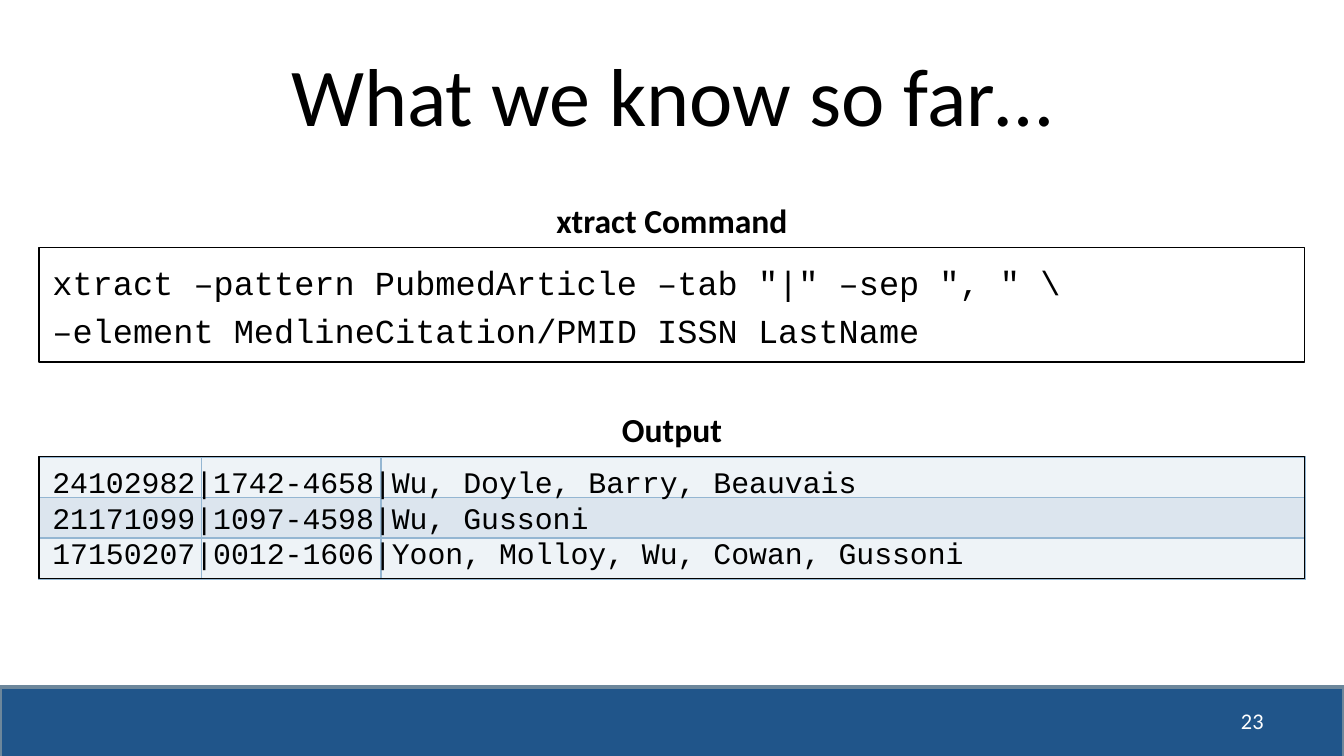
from dataclasses import dataclass

from lxml import etree
from pptx import Presentation
from pptx.dml.color import RGBColor
from pptx.enum.shapes import MSO_SHAPE
from pptx.enum.text import MSO_ANCHOR, PP_ALIGN
from pptx.oxml.ns import qn
from pptx.util import Pt

RECTANGLE = MSO_SHAPE.RECTANGLE
TOP, MIDDLE = MSO_ANCHOR.TOP, MSO_ANCHOR.MIDDLE
LEFT, CENTER, RIGHT = PP_ALIGN.LEFT, PP_ALIGN.CENTER, PP_ALIGN.RIGHT


@dataclass(frozen=True)
class Theme:
    body_font: str = "Calibri"
    code_font: str = "Courier New"
    ink: str = "000000"
    paper: str = "FFFFFF"
    footer: str = "20558A"
    footer_line: str = "6D879B"
    grid: str = "94B6D2"
    bands: tuple = ("EEF3F7", "DCE5EE")
    title_size: int = 44
    heading_size: int = 18
    command_size: int = 18
    output_size: int = 16
    number_size: int = 12


THEME = Theme()

# Shared panel geometry, in points
PANEL_LEFT, PANEL_WIDTH = 21, 678
COMMAND_TOP, COMMAND_HEIGHT = 132.5, 61.5
OUTPUT_TOP, OUTPUT_HEIGHT = 244.7, 65.4
HEADING_WIDTH, HEADING_HEIGHT = 150.5, 29
COLUMN_WIDTHS = (87, 96, 495)
ROW_COUNT = 3

COMMAND = (
    'xtract –pattern PubmedArticle –tab "|" –sep ", " \\',
    "–element MedlineCitation/PMID ISSN LastName",
)
OUTPUT = (
    "24102982|1742-4658|Wu, Doyle, Barry, Beauvais",
    "21171099|1097-4598|Wu, Gussoni",
    "17150207|0012-1606|Yoon, Molloy, Wu, Cowan, Gussoni",
)


def color(value):
    return RGBColor.from_string(value)


def write(box, lines, size, font=THEME.body_font, ink=THEME.ink, align=LEFT,
          anchor=TOP, bold=False, gap=0):
    """Fill a shape with one paragraph per line."""
    frame = box.text_frame
    frame.word_wrap = True
    frame.vertical_anchor = anchor
    for index, line in enumerate(lines):
        para = frame.add_paragraph() if index else frame.paragraphs[0]
        para.text = line
        para.alignment = align
        if index and gap:
            para.space_before = Pt(gap)
        para.font.name = font
        para.font.size = Pt(size)
        para.font.bold = bold
        para.font.color.rgb = color(ink)


def add_label(page, place, text, size, **style):
    box = page.shapes.add_textbox(*map(Pt, place))
    write(box, [text], size, **style)


def add_rectangle(page, place, line, line_width, fill=None):
    box = page.shapes.add_shape(RECTANGLE, *map(Pt, place))
    box.shadow.inherit = False
    if fill:
        box.fill.solid()
        box.fill.fore_color.rgb = color(fill)
    else:
        box.fill.background()
    box.line.color.rgb = color(line)
    box.line.width = Pt(line_width)
    return box


def add_code_panel(page, top, height, lines, size, fill=None, gap=0, inset=3.6):
    place = (PANEL_LEFT, top, PANEL_WIDTH, height)
    box = add_rectangle(page, place, THEME.ink, 0.75, fill)
    write(box, lines, size, font=THEME.code_font, gap=gap)
    box.text_frame.margin_top = Pt(inset)


def add_heading(page, panel_top, text):
    left = PANEL_LEFT + (PANEL_WIDTH - HEADING_WIDTH) / 2
    place = (left, panel_top - HEADING_HEIGHT, HEADING_WIDTH, HEADING_HEIGHT)
    add_label(page, place, text, THEME.heading_size, align=CENTER, bold=True)


def style_cell(cell, fill):
    """Give an empty cell its borders, band fill and a small line height."""
    properties = cell._tc.get_or_add_tcPr()
    for side in ("a:lnL", "a:lnR", "a:lnT", "a:lnB"):
        border = etree.SubElement(properties, qn(side), w=str(Pt(1)))
        solid = etree.SubElement(border, qn("a:solidFill"))
        etree.SubElement(solid, qn("a:srgbClr"), val=THEME.grid)
    cell.fill.solid()
    cell.fill.fore_color.rgb = color(fill)
    cell.margin_top = cell.margin_bottom = 0
    para = cell.text_frame.paragraphs[0]
    etree.SubElement(para._p, qn("a:endParaRPr"), sz="1200")


def add_band_table(page):
    place = (PANEL_LEFT, OUTPUT_TOP, PANEL_WIDTH, OUTPUT_HEIGHT)
    table = page.shapes.add_table(
        ROW_COUNT, len(COLUMN_WIDTHS), *map(Pt, place)).table
    for column, width in zip(table.columns, COLUMN_WIDTHS):
        column.width = Pt(width)
    for index, row in enumerate(table.rows):
        row.height = Pt(OUTPUT_HEIGHT / ROW_COUNT)
        for cell in row.cells:
            style_cell(cell, THEME.bands[index % 2])


def main():
    deck = Presentation()
    deck.slide_width, deck.slide_height = Pt(720), Pt(405)
    page = deck.slides.add_slide(deck.slide_layouts[6])

    # Footer bar and page number
    add_rectangle(page, (0, 368, 720, 41.8), THEME.footer_line, 2, THEME.footer)
    add_label(page, (516, 375.4, 168, 21.6), "23", THEME.number_size,
              ink=THEME.paper, align=RIGHT, anchor=MIDDLE)

    # Title
    add_label(page, (36, 16.5, 648, 67.7), "What we know so far…",
              THEME.title_size, align=CENTER, anchor=MIDDLE)

    # Command
    add_heading(page, COMMAND_TOP, "xtract Command")
    add_code_panel(page, COMMAND_TOP, COMMAND_HEIGHT, COMMAND,
                   THEME.command_size, fill=THEME.paper, gap=4.5, inset=7.6)

    # Output, written over a banded table
    add_heading(page, OUTPUT_TOP, "Output")
    add_band_table(page)
    add_code_panel(page, OUTPUT_TOP, OUTPUT_HEIGHT, OUTPUT, THEME.output_size)

    deck.save("out.pptx")


if __name__ == "__main__":
    main()
